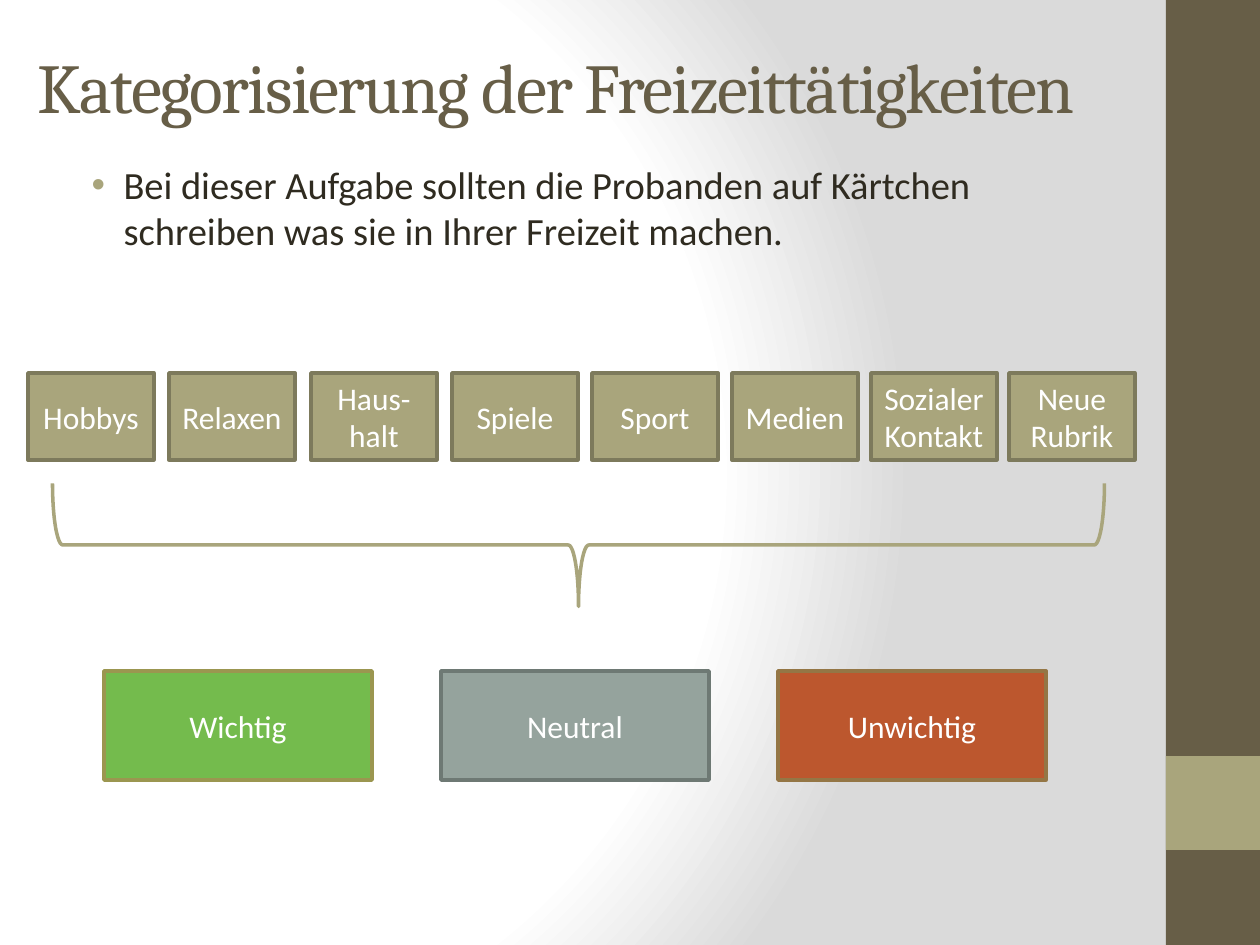
from dataclasses import dataclass

from lxml import etree
from pptx import Presentation
from pptx.dml.color import RGBColor
from pptx.enum.shapes import MSO_SHAPE
from pptx.enum.text import MSO_ANCHOR, MSO_AUTO_SIZE, PP_ALIGN
from pptx.oxml import parse_xml
from pptx.oxml.ns import nsdecls, qn
from pptx.util import Emu, Pt

RECT, BRACE = MSO_SHAPE.RECTANGLE, MSO_SHAPE.RIGHT_BRACE
TOP, MIDDLE = MSO_ANCHOR.TOP, MSO_ANCHOR.MIDDLE
LEFT, CENTER = PP_ALIGN.LEFT, PP_ALIGN.CENTER
NO_FIT = MSO_AUTO_SIZE.NONE
SCALE = 914400 / 126  # EMU in one px


@dataclass(frozen=True)
class Theme:
    head_font: str = "Cambria"
    text_font: str = "Calibri"
    head_size: int = 40
    body_size: int = 22
    box_size: int = 18
    line: int = 2
    brown: str = "675E47"
    olive: str = "A9A57C"
    edge: str = "7D7A5C"
    dark: str = "2F2B20"
    white: str = "FFFFFF"
    gray: str = "DADADA"


THEME = Theme()

# Left edge and label of each category card
CARDS = [(28, "Hobbys"), (169, "Relaxen"), (311, "Haus-halt"), (452, "Spiele"),
         (592, "Sport"), (732, "Medien"), (871, "Sozialer Kontakt"),
         (1009, "Neue Rubrik")]

# Label, fill and edge of each rating
RATINGS = [("Wichtig", "74BB4D", "9B9650"), ("Neutral", "95A39D", "6E7974"),
           ("Unwichtig", "BC572E", "947645")]


def px(num):
    return Emu(round(num * SCALE))


def rgb(code):
    return RGBColor.from_string(code)


def style(para, name, size, color, align):
    para.alignment = align
    para.font.name = name
    para.font.size = Pt(size)
    para.font.color.rgb = rgb(color)


def add_back(slide):
    """Radial gradient behind the slide."""
    stops = "".join(
        f'<a:gs pos="{pos}000"><a:srgbClr val="{color}"/></a:gs>'
        for pos, color in [(0, THEME.white), (75, THEME.white), (100, THEME.gray)])
    slide.element.cSld.insert(0, parse_xml(
        f'<p:bg {nsdecls("p", "a")}><p:bgPr><a:gradFill rotWithShape="1">'
        f'<a:gsLst>{stops}</a:gsLst><a:path path="circle">'
        '<a:fillToRect l="20000" t="50000" r="100000" b="50000"/></a:path>'
        '</a:gradFill><a:effectLst/></p:bgPr></p:bg>'))


def add_shape(slide, kind, area, fill=None, line=None):
    shape = slide.shapes.add_shape(kind, *map(px, area))
    shape.shadow.inherit = False
    if fill:
        shape.fill.solid()
        shape.fill.fore_color.rgb = rgb(fill)
    else:
        shape.fill.background()
    if line:
        shape.line.color.rgb = rgb(line)
        shape.line.width = Pt(THEME.line)
    else:
        shape.line.fill.background()
    return shape


def add_box(slide, area, label, fill, line):
    frame = add_shape(slide, RECT, area, fill, line).text_frame
    frame.word_wrap = True
    frame.vertical_anchor = MIDDLE
    frame.text = label
    style(frame.paragraphs[0], THEME.text_font, THEME.box_size, THEME.white, CENTER)


def fill_holder(holder, area, text, anchor):
    """Move a placeholder, set its text and return the paragraph."""
    holder.left, holder.top, holder.width, holder.height = map(px, area)
    frame = holder.text_frame
    frame.text = text
    frame.word_wrap = True
    frame.auto_size = NO_FIT
    frame.vertical_anchor = anchor
    return frame.paragraphs[0]


def add_title(slide, text):
    para = fill_holder(slide.shapes.title, (25, 37, 1150, 97), text, MIDDLE)
    style(para, THEME.head_font, THEME.head_size, THEME.brown, LEFT)
    para.runs[0].font._element.set("spc", "-100")


def add_list(slide, text):
    para = fill_holder(slide.placeholders[1], (63, 155, 1050, 727), text, TOP)
    style(para, THEME.text_font, THEME.body_size, THEME.dark, LEFT)
    para.space_before = Pt(4.4)
    # Hanging bullet in its own colour
    props = para._p.get_or_add_pPr()
    props.set("marL", str(px(48)))
    props.set("indent", str(-px(32)))
    marks = [parse_xml(f'<a:buClr {nsdecls("a")}><a:srgbClr val="{THEME.olive}"/></a:buClr>'),
             etree.Element(qn("a:buFont"), typeface="Arial"),
             etree.Element(qn("a:buChar"), char="•")]
    spot = props.index(props.find(qn("a:spcBef"))) + 1
    props[spot:spot] = marks


def main():
    deck = Presentation()
    deck.slide_width, deck.slide_height = px(1260), px(945)
    slide = deck.slides.add_slide(deck.slide_layouts[1])

    # Background and side band
    add_back(slide)
    add_shape(slide, RECT, (1166, 0, 94, 945), THEME.brown)
    add_shape(slide, RECT, (1166, 756, 94, 94), THEME.olive)

    # Heading and task
    add_title(slide, "Kategorisierung der Freizeittätigkeiten")
    add_list(slide, "Bei dieser Aufgabe sollten die Probanden auf Kärtchen "
                    "schreiben was sie in Ihrer Freizeit machen.")

    # Category cards
    for left, label in CARDS:
        add_box(slide, (left, 373, 126, 87), label, THEME.olive, THEME.edge)

    # Brace that points down to the ratings
    brace = add_shape(slide, BRACE, (517, 19, 123, 1052), line=THEME.olive)
    brace.rotation = 90

    # Ratings
    for num, (label, fill, edge) in enumerate(RATINGS):
        add_box(slide, (104 + 337 * num, 671, 268, 109), label, fill, edge)

    deck.save("out.pptx")


if __name__ == "__main__":
    main()
